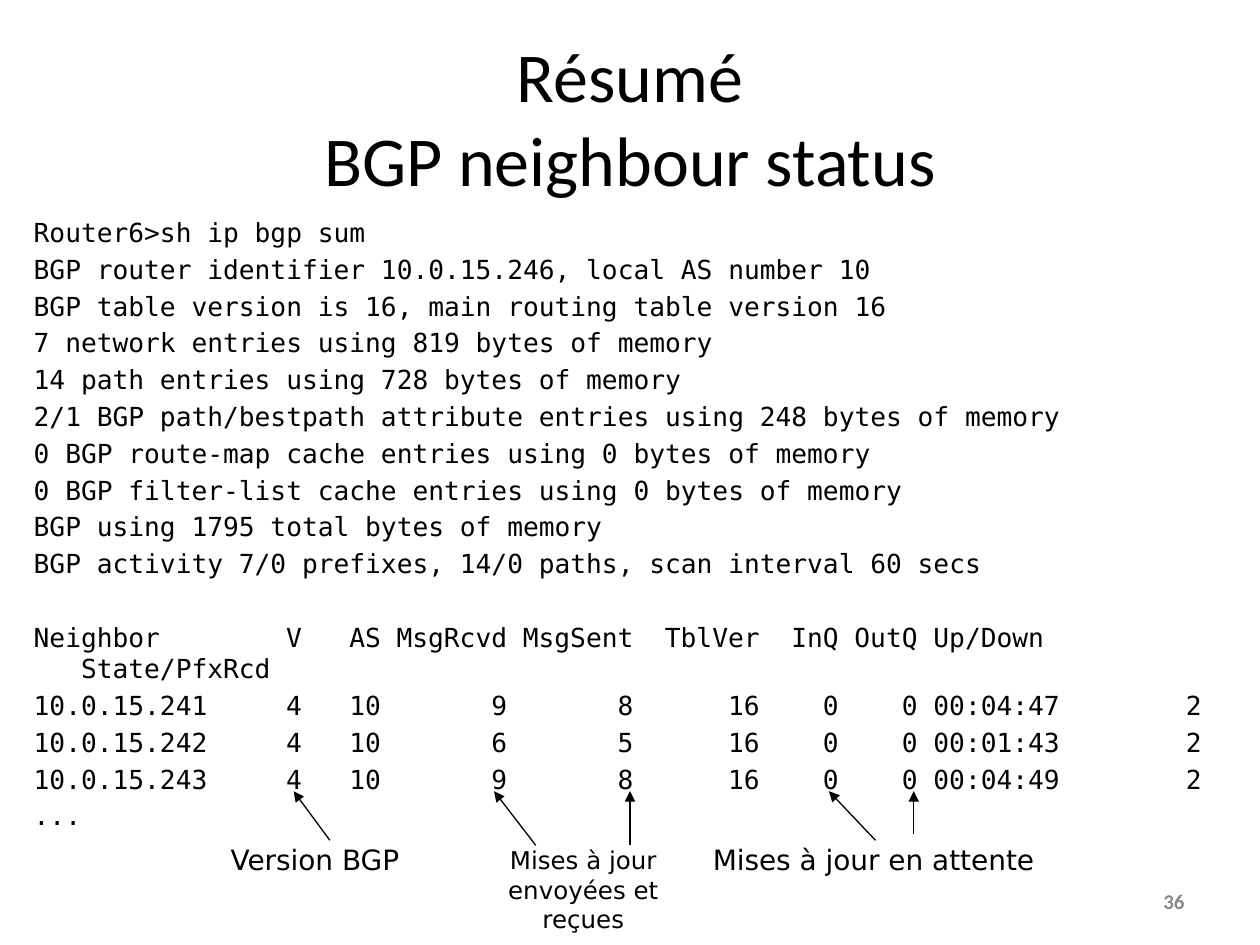
from dataclasses import dataclass

from lxml.etree import SubElement
from pptx import Presentation
from pptx.dml.color import RGBColor
from pptx.enum.shapes import MSO_CONNECTOR
from pptx.enum.text import MSO_ANCHOR, PP_ALIGN
from pptx.oxml.ns import qn
from pptx.util import Cm, Pt


@dataclass(frozen=True)
class Theme:
    black: RGBColor = RGBColor(0, 0, 0)
    grey: RGBColor = RGBColor(0x89, 0x89, 0x89)
    heading_font: str = "Calibri"
    console_font: str = "DejaVu Sans Mono"
    label_font: str = "DejaVu Sans"
    title_size: Pt = Pt(40)
    console_size: Pt = Pt(15)
    label_size: Pt = Pt(16)
    small_label_size: Pt = Pt(14)
    number_size: Pt = Pt(12)
    line_gap: Pt = Pt(3)
    section_gap: Pt = Pt(24.2)
    character_width: Pt = Pt(9.02)
    arrow_width: Pt = Pt(0.75)


THEME = Theme()

SUMMARY = (
    "Router6>sh ip bgp sum",
    "BGP router identifier 10.0.15.246, local AS number 10",
    "BGP table version is 16, main routing table version 16",
    "7 network entries using 819 bytes of memory",
    "14 path entries using 728 bytes of memory",
    "2/1 BGP path/bestpath attribute entries using 248 bytes of memory",
    "0 BGP route-map cache entries using 0 bytes of memory",
    "0 BGP filter-list cache entries using 0 bytes of memory",
    "BGP using 1795 total bytes of memory",
    "BGP activity 7/0 prefixes, 14/0 paths, scan interval 60 secs",
)
COLUMNS = ("Neighbor", "V", "AS", "MsgRcvd", "MsgSent", "TblVer", "InQ", "OutQ", "Up/Down")
NEIGHBOURS = (
    ("10.0.15.241", "4", "10", "9", "8", "16", "0", "0", "00:04:47", "2"),
    ("10.0.15.242", "4", "10", "6", "5", "16", "0", "0", "00:01:43", "2"),
    ("10.0.15.243", "4", "10", "9", "8", "16", "0", "0", "00:04:49", "2"),
)
TAB_STOPS = (
    (3, "l"), (17, "r"), (22, "r"), (30, "r"), (38, "r"),
    (46, "r"), (51, "r"), (56, "r"), (57, "l"), (74, "r"),
)
ARROW_TIP = 15.95
ARROWS = (
    ((6.65, 16.94), (5.92, ARROW_TIP)),
    ((12.7, 17.04), (12.7, ARROW_TIP)),
    ((10.8, 17.04), (9.96, ARROW_TIP)),
    ((17.65, 16.94), (16.71, ARROW_TIP)),
    ((18.42, 16.81), (18.42, ARROW_TIP)),
)


def add_run(paragraph, text, font, size, color=THEME.black, bold=False):
    """Append one formatted run to a paragraph."""
    run = paragraph.add_run()
    run.text = text
    run.font.name = font
    run.font.size = size
    run.font.bold = bold
    run.font.color.rgb = color


def add_frame(slide, left, top, width, height, anchor=MSO_ANCHOR.TOP, wrap=True):
    """Add a text box measured in centimetres and return its text frame."""
    shape = slide.shapes.add_textbox(Cm(left), Cm(top), Cm(width), Cm(height))
    frame = shape.text_frame
    frame.word_wrap = wrap
    frame.vertical_anchor = anchor
    return frame


def add_title(slide, first_line, second_line):
    """Add the centred title on two lines."""
    paragraph = add_frame(slide, 1.27, 0.76, 22.86, 3.18, MSO_ANCHOR.MIDDLE).paragraphs[0]
    paragraph.alignment = PP_ALIGN.CENTER
    add_run(paragraph, first_line, THEME.heading_font, THEME.title_size)
    paragraph.add_line_break()
    add_run(paragraph, second_line, THEME.heading_font, THEME.title_size)


def add_label(slide, text, box, size=THEME.label_size, wrap=False):
    """Add a callout label, centred when it wraps."""
    frame = add_frame(slide, *box, wrap=wrap)
    frame.margin_left = frame.margin_right = Cm(0.2)
    frame.margin_top = frame.margin_bottom = Cm(0.1)
    paragraph = frame.paragraphs[0]
    paragraph.alignment = PP_ALIGN.CENTER if wrap else PP_ALIGN.LEFT
    add_run(paragraph, text, THEME.label_font, size)


def add_arrow(slide, start, end):
    """Add a thin straight arrow pointing at the end position."""
    points = [Cm(value) for value in (*start, *end)]
    connector = slide.shapes.add_connector(MSO_CONNECTOR.STRAIGHT, *points)
    connector.line.color.rgb = THEME.black
    connector.line.width = THEME.arrow_width
    SubElement(connector.line._get_or_add_ln(), qn("a:tailEnd"), type="triangle")
    SubElement(connector._element.spPr, qn("a:effectLst"))


def add_console_line(frame, text, gap=THEME.line_gap):
    """Add one line of router output and return its paragraph."""
    is_first = not frame.paragraphs[0].runs
    paragraph = frame.paragraphs[0] if is_first else frame.add_paragraph()
    paragraph.space_before = gap
    add_run(paragraph, text, THEME.console_font, THEME.console_size)
    return paragraph


def add_console_row(frame, cells, gap=THEME.line_gap):
    """Add one tab-aligned row of router output and return its paragraph."""
    paragraph = add_console_line(frame, "\t".join(cells), gap)
    tab_list = SubElement(paragraph._p.get_or_add_pPr(), qn("a:tabLst"))
    for column, alignment in TAB_STOPS:
        position = str(int(column * THEME.character_width))
        SubElement(tab_list, qn("a:tab"), pos=position, algn=alignment)
    return paragraph


def add_console(slide):
    """Add the router summary followed by the neighbour rows."""
    frame = add_frame(slide, 0.43, 4.24, 24.97, 12.7)
    for line in SUMMARY:
        add_console_line(frame, line)
    header = add_console_row(frame, COLUMNS, THEME.section_gap)
    header.add_line_break()
    add_run(header, "\tState/PfxRcd", THEME.console_font, THEME.console_size)
    for neighbour in NEIGHBOURS:
        add_console_row(frame, neighbour)
    add_console_line(frame, "...")


def add_slide_number(slide, number):
    """Add the right-aligned slide number."""
    paragraph = add_frame(slide, 18.21, 17.65, 5.92, 1.02, MSO_ANCHOR.MIDDLE).paragraphs[0]
    paragraph.alignment = PP_ALIGN.RIGHT
    add_run(paragraph, number, THEME.heading_font, THEME.number_size, THEME.grey, bold=True)


def main():
    """Build the slide and save the presentation."""
    presentation = Presentation()
    presentation.slide_width, presentation.slide_height = Cm(25.4), Cm(19.05)
    slide = presentation.slides.add_slide(presentation.slide_layouts[6])
    add_title(slide, "Résumé", "BGP neighbour status")
    add_console(slide)
    add_slide_number(slide, "36")
    add_label(slide, "Version BGP", (4.45, 16.89, 3.89, 0.89))
    add_label(slide, "Mises à jour envoyées et reçues", (9.32, 16.94, 4.88, 2.01),
              THEME.small_label_size, wrap=True)
    add_label(slide, "Mises à jour en attente", (14.17, 16.89, 7.01, 0.89))
    for start, end in ARROWS:
        add_arrow(slide, start, end)
    presentation.save("out.pptx")


if __name__ == "__main__":
    main()
